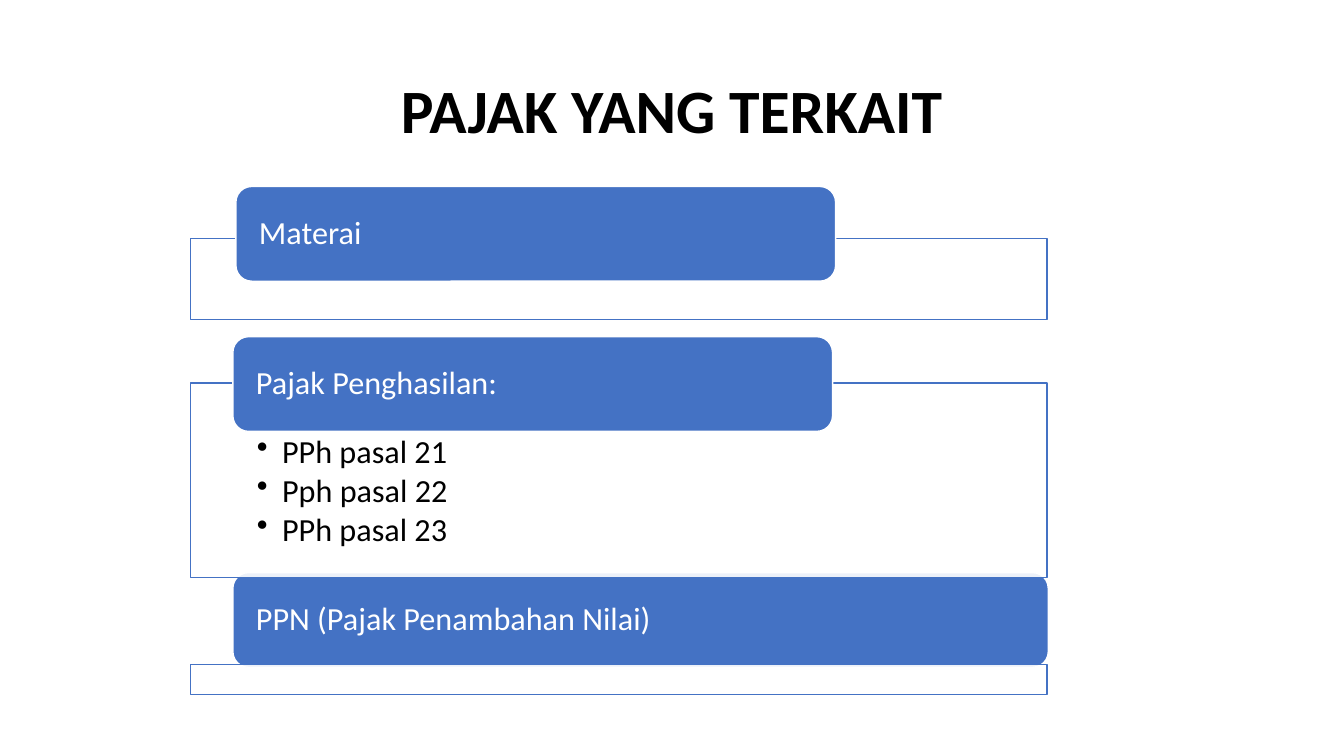
from lxml import etree
from pptx import Presentation
from pptx.dml.color import RGBColor
from pptx.enum.shapes import MSO_SHAPE as Shape
from pptx.enum.text import MSO_ANCHOR as Anchor, PP_ALIGN as Align
from pptx.oxml.ns import qn
from pptx.util import Pt

BLUE, WHITE, BLACK = "4472C4", "FFFFFF", "000000"
FRAME_LEFT, FRAME_WIDTH = 136, 612
HEADING_HEIGHT = 67.7


def color(hex_value):
    return RGBColor.from_string(hex_value)


def format_text(text_frame, size, text_color, align=Align.LEFT, bold=False, space_after=0):
    for paragraph in text_frame.paragraphs:
        paragraph.alignment = align
        paragraph.line_spacing = 0.9
        paragraph.space_after = Pt(space_after)
        for run in paragraph.runs:
            run.font.name = "Calibri"
            run.font.size = Pt(size)
            run.font.bold = bold
            run.font.color.rgb = color(text_color)


def set_margins(text_frame, side, top=0, bottom=0):
    text_frame.margin_left = text_frame.margin_right = Pt(side)
    text_frame.margin_top = Pt(top)
    text_frame.margin_bottom = Pt(bottom)


def add_bullets(text_frame):
    for paragraph in text_frame.paragraphs:
        properties = paragraph._p.get_or_add_pPr()
        properties.set("marL", str(Pt(18)))
        properties.set("indent", str(-Pt(18)))
        etree.SubElement(properties, qn("a:buChar")).set("char", "•")


def add_title(slide, text):
    title = slide.shapes.add_textbox(Pt(66), Pt(28.8), Pt(828), Pt(104.4))
    text_frame = title.text_frame
    text_frame.word_wrap = True
    text_frame.vertical_anchor = Anchor.MIDDLE
    text_frame.text = text
    format_text(text_frame, 44, BLACK, Align.CENTER, bold=True)


def add_box(slide, kind, left, top, width, height, fill, line):
    box = slide.shapes.add_shape(kind, Pt(left), Pt(top), Pt(width), Pt(height))
    box.shadow.inherit = False
    box.fill.solid()
    box.fill.fore_color.rgb = color(fill)
    box.line.color.rgb = color(line)
    box.line.width = Pt(1)
    box.text_frame.word_wrap = True
    return box


def add_frame(slide, top, height, items=()):
    """Add an outlined, slightly transparent panel with an optional bullet list."""
    frame = add_box(slide, Shape.RECTANGLE, FRAME_LEFT, top, FRAME_WIDTH, height, WHITE, BLUE)
    fill_color = frame._element.spPr.find(qn("a:solidFill"))[0]
    etree.SubElement(fill_color, qn("a:alpha")).set("val", "90000")
    if items:
        text_frame = frame.text_frame
        text_frame.vertical_anchor = Anchor.TOP
        set_margins(text_frame, 47.5, 37.4, 13)
        text_frame.text = "\n".join(items)
        format_text(text_frame, 23, BLACK, space_after=3)
        add_bullets(text_frame)


def add_heading(slide, text, left, top, width):
    heading = add_box(slide, Shape.ROUNDED_RECTANGLE, left, top, width, HEADING_HEIGHT, BLUE, WHITE)
    text_frame = heading.text_frame
    text_frame.vertical_anchor = Anchor.MIDDLE
    set_margins(text_frame, 13.2)
    text_frame.text = text
    format_text(text_frame, 23, WHITE)


def main():
    presentation = Presentation()
    presentation.slide_width, presentation.slide_height = Pt(960), Pt(540)
    slide = presentation.slides.add_slide(presentation.slide_layouts[6])

    add_title(slide, "PAJAK YANG TERKAIT")
    add_frame(slide, 170.6, 57.6)
    add_heading(slide, "PPN (Pajak Penambahan Nilai)", 166.3, 409, 582.5)
    add_frame(slide, 273.6, 139, ("PPh pasal 21", "Pph pasal 22", "PPh pasal 23"))
    add_heading(slide, "Pajak Penghasilan:", 166.3, 240.5, 428.4)
    add_frame(slide, 474.5, 21.6)
    add_heading(slide, "Materai", 168.5, 133.2, 428.4)

    presentation.save("out.pptx")


if __name__ == "__main__":
    main()
